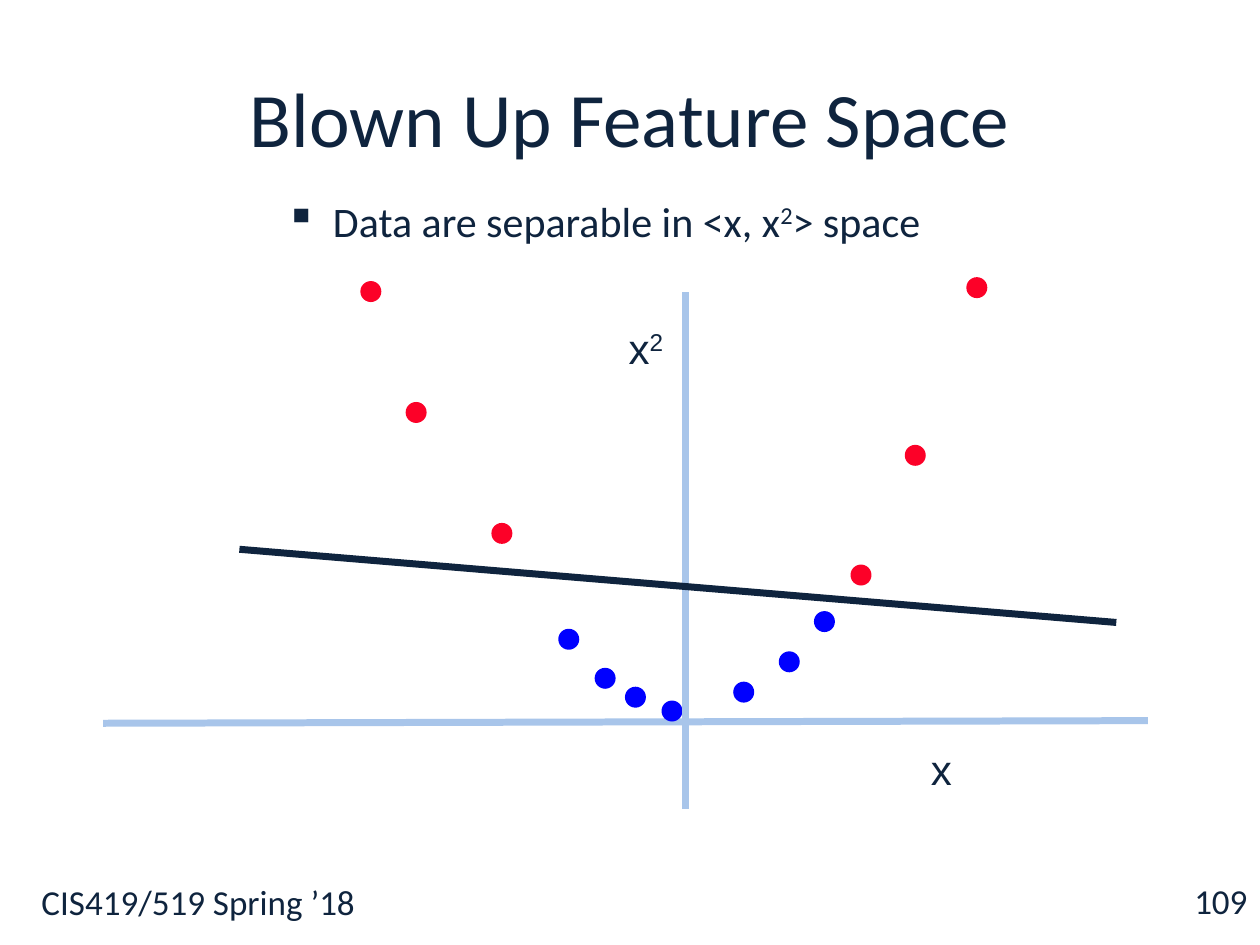
from dataclasses import dataclass

import pptx
import pptx.dml.color
import pptx.enum.shapes
import pptx.enum.text
import pptx.oxml.ns
import pptx.util
from lxml import etree

Pt = pptx.util.Pt
RGB = pptx.dml.color.RGBColor.from_string
Align = pptx.enum.text.PP_ALIGN
Anchor = pptx.enum.text.MSO_ANCHOR
qn = pptx.oxml.ns.qn


@dataclass(frozen=True)
class Theme:
    ink: str = "0F243E"
    axis: str = "A8C5EA"
    inner: str = "0000FF"
    outer: str = "FC0128"
    font: str = "Calibri"
    label_font: str = "Arial"
    title_size: int = 44
    body_size: int = 24
    footer_size: int = 20
    line_width: int = 4
    dot_size: int = 12


THEME = Theme()

# Left and top of each dot, in points.
INNER_DOTS = [(319, 359.3), (339.8, 381.6), (357.1, 392.4), (378, 400.3),
              (419, 389.5), (445, 372.2), (465.1, 349.2)]
OUTER_DOTS = [(205.9, 160.6), (231.8, 229.7), (280.8, 298.8),
              (486, 322.6), (517, 254.2), (552.2, 158.4)]


def add_spans(para, spans, size, font):
    """Add (text, is_superscript) pairs as runs."""
    for text, is_superscript in spans:
        span = para.add_run()
        span.text = text
        span.font.size = Pt(size)
        span.font.name = font
        span.font.color.rgb = RGB(THEME.ink)
        if is_superscript:
            span.font._element.set("baseline", "30000")


def add_text(slide, place, spans, size, font=THEME.font, align=Align.LEFT,
             anchor=Anchor.TOP, wrap=True):
    box = slide.shapes.add_textbox(*map(Pt, place))
    box.text_frame.word_wrap = wrap
    box.text_frame.vertical_anchor = anchor
    para = box.text_frame.paragraphs[0]
    para.alignment = align
    add_spans(para, spans, size, font)
    return box


def add_title(slide, text):
    title = slide.shapes.title
    title.left, title.top, title.width, title.height = map(Pt, (36, 21.6, 648, 90))
    title.text_frame.vertical_anchor = Anchor.MIDDLE
    para = title.text_frame.paragraphs[0]
    para.alignment = Align.CENTER
    add_spans(para, [(text, False)], THEME.title_size, THEME.font)


def set_bullet(para, character, indent):
    properties = para._p.get_or_add_pPr()
    properties.set("marL", str(Pt(indent)))
    properties.set("indent", str(-Pt(indent)))
    etree.SubElement(properties, qn("a:buChar")).set("char", character)


def add_line(slide, start, end, color):
    line = slide.shapes.add_connector(
        pptx.enum.shapes.MSO_CONNECTOR.STRAIGHT, *map(Pt, start + end))
    line.line.color.rgb = RGB(color)
    line.line.width = Pt(THEME.line_width)
    etree.SubElement(line._element.spPr, qn("a:effectLst"))


def add_dots(slide, positions, color):
    size = Pt(THEME.dot_size)
    for left, top in positions:
        dot = slide.shapes.add_shape(
            pptx.enum.shapes.MSO_SHAPE.OVAL, Pt(left), Pt(top), size, size)
        dot.shadow.inherit = False
        dot.fill.solid()
        dot.fill.fore_color.rgb = RGB(color)
        dot.line.fill.background()


def add_axis_label(slide, place, spans):
    box = add_text(slide, place, spans, THEME.body_size, THEME.label_font, wrap=False)
    box.text_frame.auto_size = pptx.enum.text.MSO_AUTO_SIZE.SHAPE_TO_FIT_TEXT


def main():
    deck = pptx.Presentation()
    deck.slide_width, deck.slide_height = Pt(720), Pt(540)
    slide = deck.slides.add_slide(deck.slide_layouts.get_by_name("Title Only"))

    add_text(slide, (16.6, 499.7, 691, 40.3), [("CIS419/519 Spring ’18", False)],
             THEME.footer_size)
    add_title(slide, "Blown Up Feature Space")
    body = add_text(slide, (156.2, 108, 563.8, 356.4),
                    [("Data are separable in <x, x", False), ("2", True),
                     ("> space", False)], THEME.body_size)
    set_bullet(body.text_frame.paragraphs[0], "▪", 27)
    add_text(slide, (552.2, 500.4, 167.8, 28.8), [("109", False)],
             THEME.footer_size, align=Align.RIGHT, anchor=Anchor.MIDDLE)

    add_line(slide, (59, 413.3), (655.9, 411.8), THEME.axis)
    add_dots(slide, INNER_DOTS, THEME.inner)
    add_dots(slide, OUTER_DOTS, THEME.outer)
    add_axis_label(slide, (524.9, 421.2, 26.6, 36), [("x", False)])
    add_line(slide, (391.7, 462.2), (391.7, 167), THEME.axis)
    add_axis_label(slide, (352.1, 180.7, 35.3, 36), [("x", False), ("2", True)])
    add_line(slide, (136.8, 313.9), (637.9, 355.7), THEME.ink)

    deck.save("out.pptx")


if __name__ == "__main__":
    main()
